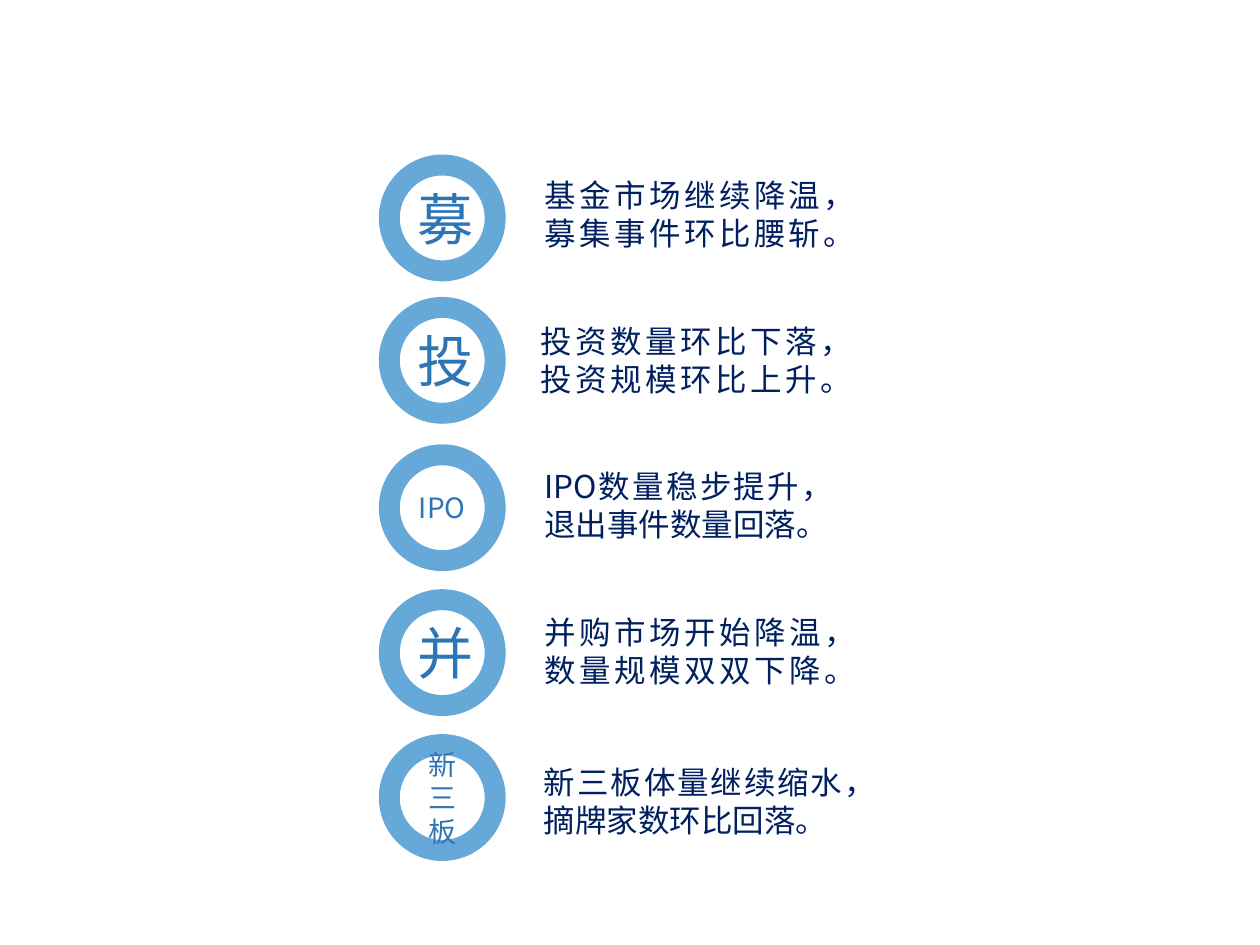
from lxml import etree
from pptx import Presentation
from pptx.enum import shapes, text
from pptx.oxml import ns
from pptx.util import Pt
from pptx.dml.color import RGBColor

COLORS = {"ring": "0070C0", "label": "2E75B6", "summary": "002060"}
RING_LEFT, RING_SIZE, RING_WIDTH = 222.5, 60.5, 12
SUMMARY_HEIGHT = 51

# label, label size, ring top, summary paragraphs, summary left, top, width
TOPICS = [
    ("募", 32, 94.3, ["基金市场继续降温，募集事件环比腰斩。"], 303.8, 97.2, 174.2),
    ("投", 32, 175.7, ["投资数量环比下落，投资规模环比上升。"], 301.7, 180.7, 174.2),
    ("IPO", 16, 259.9, ["IPO数量稳步提升，退出事件数量回落。"], 303.8, 263.5, 179.3),
    ("并", 32, 342.7, ["并购市场开始降温，", "数量规模双双下降。"], 304.2, 347, 174.2),
    ("新三板", 16, 425.5, ["新三板体量继续缩水，摘牌家数环比回落。"], 303.8, 432.7, 203.8),
]


def rgb(name):
    return RGBColor.from_string(COLORS[name])


def write(frame, paragraphs, *, size, font, color, align):
    frame.word_wrap = True
    for i, line in enumerate(paragraphs):
        paragraph = frame.paragraphs[0] if i == 0 else frame.add_paragraph()
        paragraph.alignment = align
        run = paragraph.add_run()
        run.text = line
        run.font.size = Pt(size)
        run.font.name = font
        run.font.color.rgb = rgb(color)
        east_asian = etree.SubElement(run.font._element, ns.qn("a:ea"))
        east_asian.set("typeface", font)


def add_ring(slide, label, size, top):
    ring = slide.shapes.add_shape(
        shapes.MSO_SHAPE.OVAL, Pt(RING_LEFT), Pt(top), Pt(RING_SIZE), Pt(RING_SIZE))
    ring.shadow.inherit = False
    ring.fill.background()
    ring.line.width = Pt(RING_WIDTH)
    ring.line.color.rgb = rgb("ring")
    ring_color = ring.line._ln.find(".//" + ns.qn("a:srgbClr"))
    etree.SubElement(ring_color, ns.qn("a:alpha")).set("val", "60000")
    ring.text_frame.vertical_anchor = text.MSO_ANCHOR.MIDDLE
    write(ring.text_frame, [label], size=size, font="Noto Sans CJK JP",
          color="label", align=text.PP_ALIGN.CENTER)


def add_summary(slide, paragraphs, left, top, width):
    summary = slide.shapes.add_textbox(Pt(left), Pt(top), Pt(width), Pt(SUMMARY_HEIGHT))
    write(summary.text_frame, paragraphs, size=18, font="Noto Sans CJK SC",
          color="summary", align=text.PP_ALIGN.JUSTIFY)
    summary.text_frame.auto_size = text.MSO_AUTO_SIZE.SHAPE_TO_FIT_TEXT


def main():
    deck = Presentation()
    deck.slide_width, deck.slide_height = Pt(720), Pt(540)
    slide = deck.slides.add_slide(deck.slide_layouts[6])
    for label, size, ring_top, paragraphs, left, top, width in TOPICS:
        add_ring(slide, label, size, ring_top)
        add_summary(slide, paragraphs, left, top, width)
    deck.save("out.pptx")


if __name__ == "__main__":
    main()
